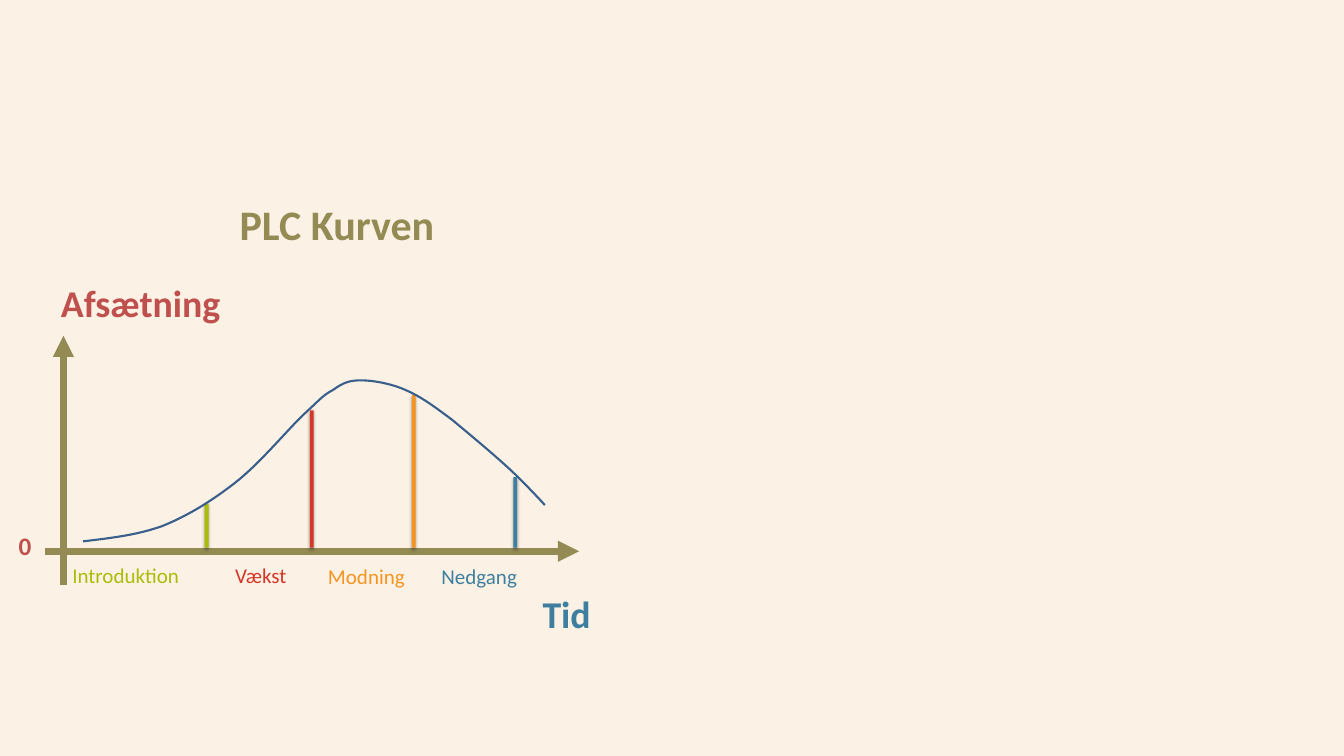
from dataclasses import dataclass

from lxml import etree
from pptx import Presentation
from pptx import util as u
from pptx.dml.color import RGBColor
from pptx.enum import shapes, text
from pptx.oxml import ns

OLIVE, RED, BLUE = "948A54", "C0504D", "3E7F9F"
BASELINE, BAR_WIDTH, STEPS = 18.4, 0.13, 12


@dataclass(frozen=True)
class Label:
    wording: str
    left: float
    top: float
    width: float
    height: float
    size: int
    color: str
    bold: bool = True


@dataclass(frozen=True)
class Phase:
    label: Label
    bar_left: float
    bar_top: float


@dataclass(frozen=True)
class Axis:
    start: tuple[float, float]
    end: tuple[float, float]


def phase(name, left, top, width, color, bar_left, bar_top) -> Phase:
    return Phase(Label(name, left, top, width, 1.12, 20, color, False), bar_left, bar_top)


TITLE = Label("PLC Kurven", 7.8, 6.53, 7.11, 1.96, 40, OLIVE)
AXIS_LABELS = [
    Label("Tid", 17.98, 19.71, 2.16, 1.8, 36, BLUE),
    Label("Afsætning", 1.8, 9.27, 5.94, 1.8, 36, RED),
    Label("0", 0.38, 17.7, 0.94, 1.27, 24, RED),
]
PHASES = [
    phase("Introduktion", 2.18, 18.77, 4.14, "ABBC06", 6.88, 16.92),
    phase("Vækst", 7.65, 18.77, 2.26, "D53627", 10.41, 13.79),
    phase("Modning", 10.77, 18.8, 3.12, "F79421", 13.84, 13.28),
    phase("Nedgang", 14.58, 18.82, 3.07, BLUE, 17.25, 16.03),
]
AXES = [Axis((2.13, 19.66), (2.13, 11.28)), Axis((1.5, 18.52), (19.46, 18.52))]
CURVE_START = (2.79, 18.19)
CURVE = [
    ((3.71, 18.08), (4.6, 17.98), (5.44, 17.68)),
    ((6.27, 17.35), (7.06, 16.87), (7.85, 16.26)),
    ((8.66, 15.65), (9.63, 14.48), (10.19, 13.94)),
    ((10.74, 13.44), (10.85, 13.28), (11.18, 13.11)),
    ((11.48, 12.9), (11.68, 12.78), (12.12, 12.78)),
    ((12.52, 12.78), (13.13, 12.88), (13.64, 13.11)),
    ((14.17, 13.34), (14.61, 13.67), (15.21, 14.12)),
    ((15.8, 14.61), (16.74, 15.39), (17.25, 15.88)),
    ((17.75, 16.36), (18.19, 16.84), (18.31, 16.97)),
]


def rgb(value: str) -> RGBColor:
    return RGBColor.from_string(value)


def apply(target, values: dict) -> None:
    for name, value in values.items():
        setattr(target, name, value)


def fill_label(box, label: Label) -> None:
    apply(box, {"left": u.Cm(label.left), "top": u.Cm(label.top),
                "width": u.Cm(label.width), "height": u.Cm(label.height)})
    frame = box.text_frame
    apply(frame, {"word_wrap": False, "auto_size": text.MSO_AUTO_SIZE.SHAPE_TO_FIT_TEXT,
                  "vertical_anchor": text.MSO_ANCHOR.TOP})
    para = frame.paragraphs[0]
    para.alignment = text.PP_ALIGN.LEFT
    span = para.add_run()
    span.text = label.wording
    apply(span.font, {"name": "Calibri", "size": u.Pt(label.size), "bold": label.bold})
    span.font.color.rgb = rgb(label.color)


def add_label(page, label: Label) -> None:
    fill_label(page.shapes.add_textbox(0, 0, 0, 0), label)


def add_axis(page, axis: Axis) -> None:
    ends = [u.Cm(value) for value in axis.start + axis.end]
    arrow = page.shapes.add_connector(shapes.MSO_CONNECTOR.STRAIGHT, *ends)
    arrow.line.color.rgb = rgb(OLIVE)
    arrow.line.width = u.Pt(6.75)
    etree.SubElement(arrow.line._get_or_add_ln(), ns.qn("a:tailEnd"), type="triangle")
    etree.SubElement(arrow._element.spPr, ns.qn("a:effectLst"))


def add_bar(page, stage: Phase) -> None:
    bar = page.shapes.add_shape(
        shapes.MSO_SHAPE.RECTANGLE, u.Cm(stage.bar_left), u.Cm(stage.bar_top),
        u.Cm(BAR_WIDTH), u.Cm(BASELINE - stage.bar_top))
    bar.fill.solid()
    bar.fill.fore_color.rgb = rgb(stage.label.color)
    bar.line.fill.background()
    bar.shadow.inherit = False
    effects = bar._element.spPr.find(ns.qn("a:effectLst"))
    shadow = etree.SubElement(
        effects, ns.qn("a:outerShdw"), blurRad=str(u.Pt(3.1)), dist=str(u.Pt(1.6)),
        dir="5400000", rotWithShape="0")
    tint = etree.SubElement(shadow, ns.qn("a:srgbClr"), val="000000")
    etree.SubElement(tint, ns.qn("a:alpha"), val="38000")


def bezier(points: list, t: float) -> tuple[int, int]:
    weights = ((1 - t) ** 3, 3 * t * (1 - t) ** 2, 3 * t ** 2 * (1 - t), t ** 3)
    x, y = (sum(w * p[i] for w, p in zip(weights, points)) for i in (0, 1))
    return u.Cm(x), u.Cm(y)


def add_curve(page) -> None:
    points, start = [], CURVE_START
    for segment in CURVE:
        points += [bezier([start, *segment], step / STEPS) for step in range(1, STEPS + 1)]
        start = segment[-1]
    builder = page.shapes.build_freeform(*(u.Cm(value) for value in CURVE_START))
    builder.add_line_segments(points, close=False)
    curve = builder.convert_to_shape()
    curve.fill.background()
    curve.line.color.rgb = rgb("3A5F8C")
    curve.line.width = u.Pt(2)
    curve.shadow.inherit = False


def main() -> None:
    deck = Presentation()
    apply(deck, {"slide_width": u.Cm(45.16), "slide_height": u.Cm(25.4)})
    page = deck.slides.add_slide(deck.slide_layouts[5])
    page.background.fill.solid()
    page.background.fill.fore_color.rgb = rgb("FBF2E5")
    fill_label(page.shapes.title, TITLE)
    for axis in AXES:
        add_axis(page, axis)
    for stage in PHASES:
        add_bar(page, stage)
    add_curve(page)
    for label in AXIS_LABELS + [stage.label for stage in PHASES]:
        add_label(page, label)
    deck.save("out.pptx")


if __name__ == "__main__":
    main()
